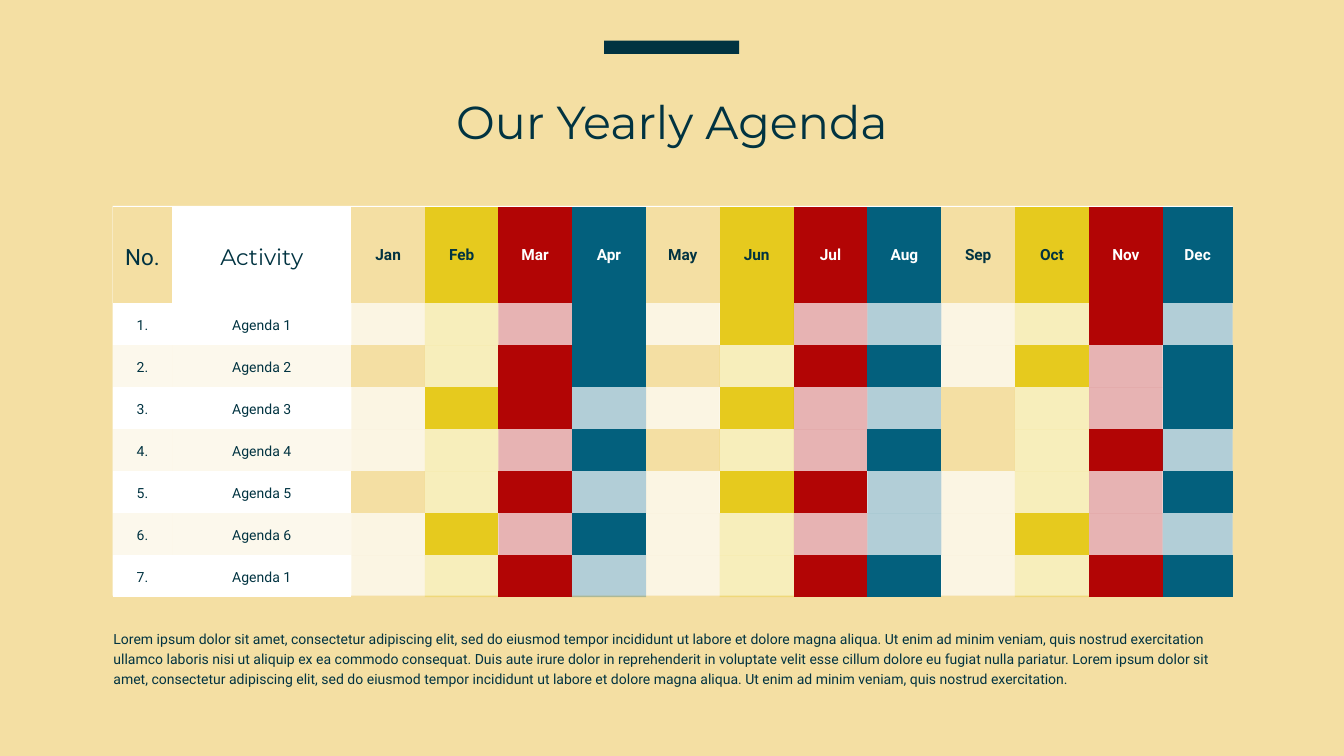
import dataclasses
import typing

import pptx
import pptx.dml.color
import pptx.enum.shapes
import pptx.enum.text
import pptx.oxml
import pptx.oxml.ns
import pptx.util

RGBColor = pptx.dml.color.RGBColor
SAND = RGBColor(0xF4, 0xDF, 0xA3)
YELLOW = RGBColor(0xE6, 0xCA, 0x1E)
RED = RGBColor(0xB2, 0x05, 0x05)
TEAL = RGBColor(0x03, 0x60, 0x7D)
NAVY = RGBColor(0x01, 0x33, 0x41)
WHITE = RGBColor(0xFF, 0xFF, 0xFF)

EMU_PER_PX = 12700
DRAWING_NS = "http://schemas.openxmlformats.org/drawingml/2006/main"
NO_GRID_STYLE = "{2D5ABB26-0587-4C30-8999-92F81FD0307C}"
CENTER = pptx.enum.text.PP_ALIGN.CENTER
LEFT = pptx.enum.text.PP_ALIGN.LEFT
MIDDLE = pptx.enum.text.MSO_ANCHOR.MIDDLE
TOP = pptx.enum.text.MSO_ANCHOR.TOP

MONTHS = "Jan Feb Mar Apr May Jun Jul Aug Sep Oct Nov Dec".split()
MONTH_FILLS = [SAND, YELLOW, RED, TEAL]
MONTH_INKS = [NAVY, NAVY, WHITE, WHITE]
COLUMN_WIDTHS = [85, 256, 105, 105, 105, 106, 105, 106, 105, 106, 105, 106, 105, 100]
ROW_HEIGHTS = [138] + [60] * 7
ACTIVE_MONTHS = {
    "Agenda 1": "Apr Jun Nov",
    "Agenda 2": "Jan Mar Apr May Jul Aug Oct Dec",
    "Agenda 3": "Feb Mar Jun Sep Dec",
    "Agenda 4": "Apr May Aug Sep Nov",
    "Agenda 5": "Jan Mar Jun Jul Dec",
    "Agenda 6": "Feb Apr Oct",
}
ACTIVITIES = [*ACTIVE_MONTHS.items(), ("Agenda 1", "Mar Jul Aug Nov Dec")]
SUMMARY = (
    "Lorem ipsum dolor sit amet, consectetur adipiscing elit, sed do eiusmod tempor "
    "incididunt ut labore et dolore magna aliqua. Ut enim ad minim veniam, quis nostrud "
    "exercitation ullamco laboris nisi ut aliquip ex ea commodo consequat. Duis aute irure "
    "dolor in reprehenderit in voluptate velit esse cillum dolore eu fugiat nulla pariatur. "
    "Lorem ipsum dolor sit amet, consectetur adipiscing elit, sed do eiusmod tempor "
    "incididunt ut labore et dolore magna aliqua. Ut enim ad minim veniam, quis nostrud "
    "exercitation."
)


@dataclasses.dataclass(frozen=True)
class Area:
    left: int
    top: int
    width: int
    height: int

    def emu(self) -> dict[str, int]:
        return {name: px(value) for name, value in dataclasses.asdict(self).items()}


@dataclasses.dataclass(frozen=True)
class TextStyle:
    size: int
    font: str = "Roboto"
    color: RGBColor = NAVY
    bold: bool = False
    spacing: float = 1.0
    align: typing.Any = CENTER


@dataclasses.dataclass(frozen=True)
class AgendaCell:
    fill: RGBColor
    opacity: int = 100
    text: str = ""
    style: TextStyle = TextStyle(20, spacing=1.2)


def px(length: int) -> pptx.util.Emu:
    return pptx.util.Emu(length * EMU_PER_PX)


def set_values(target: typing.Any, values: dict[str, typing.Any]) -> None:
    for name, value in values.items():
        setattr(target, name, value)


def margins(size: int) -> dict[str, int]:
    return {f"margin_{side}": px(size) for side in ("left", "top", "right", "bottom")}


def write(frame: typing.Any, text: str, style: TextStyle) -> None:
    para = frame.paragraphs[0]
    spacing = {"alignment": style.align, "line_spacing": style.spacing,
               "space_before": px(0), "space_after": px(0)}
    set_values(para, spacing)
    span = para.add_run()
    span.text = text
    set_values(span.font, {"name": style.font, "size": pptx.util.Pt(style.size), "bold": style.bold})
    span.font.color.rgb = style.color


def fill_placeholder(box: typing.Any, area: Area, text: str, style: TextStyle, anchor: typing.Any) -> None:
    set_values(box, area.emu())
    frame = box.text_frame
    layout = {"word_wrap": True, "auto_size": pptx.enum.text.MSO_AUTO_SIZE.NONE,
              "vertical_anchor": anchor}
    set_values(frame, {**layout, **margins(2)})
    write(frame, text, style)


def remove_bullet(para: typing.Any) -> None:
    properties = para._p.get_or_add_pPr()
    properties.set("marL", "0")
    properties.set("indent", "0")
    properties.append(pptx.oxml.parse_xml(f'<a:buNone xmlns:a="{DRAWING_NS}"/>'))


def add_block(page: typing.Any, area: Area, color: RGBColor) -> None:
    block = page.shapes.add_shape(pptx.enum.shapes.MSO_SHAPE.RECTANGLE, **area.emu())
    block.fill.solid()
    block.fill.fore_color.rgb = color
    block.line.fill.background()
    block.shadow.inherit = False


def draw_cell(cell: typing.Any, content: AgendaCell) -> None:
    set_values(cell, {"vertical_anchor": MIDDLE, **margins(4)})
    cell.fill.solid()
    cell.fill.fore_color.rgb = content.fill
    if content.opacity < 100:
        color = cell._tc.tcPr.find(f".//{{{DRAWING_NS}}}srgbClr")
        alpha = f'<a:alpha xmlns:a="{DRAWING_NS}" val="{content.opacity * 1000}"/>'
        color.append(pptx.oxml.parse_xml(alpha))
    if content.text:
        write(cell.text_frame, content.text, content.style)


def header_row() -> list[AgendaCell]:
    number = AgendaCell(SAND, text="No.", style=TextStyle(32, spacing=1.2))
    activity = AgendaCell(WHITE, text="Activity", style=TextStyle(32, "Montserrat", spacing=1.2))
    months = [
        AgendaCell(MONTH_FILLS[index % 4], text=month,
                   style=TextStyle(22, color=MONTH_INKS[index % 4], bold=True))
        for index, month in enumerate(MONTHS)
    ]
    return [number, activity, *months]


def activity_row(number: int, name: str, active: str) -> list[AgendaCell]:
    fill, opacity = (WHITE, 100) if number % 2 else (SAND, 20)
    labels = [AgendaCell(fill, opacity, text) for text in (f"{number}.", name)]
    months = [
        AgendaCell(MONTH_FILLS[index % 4], 100 if month in active.split() else 30)
        for index, month in enumerate(MONTHS)
    ]
    return labels + months


def add_agenda(page: typing.Any, area: Area) -> None:
    rows = [header_row()]
    rows += [activity_row(number, *entry) for number, entry in enumerate(ACTIVITIES, 1)]
    table = page.shapes.add_table(len(rows), len(COLUMN_WIDTHS), **area.emu()).table
    set_values(table, {"first_row": False, "horz_banding": False})
    table._tbl.tblPr.find(pptx.oxml.ns.qn("a:tableStyleId")).text = NO_GRID_STYLE
    for column, width in zip(table.columns, COLUMN_WIDTHS):
        column.width = px(width)
    for row, height, contents in zip(table.rows, ROW_HEIGHTS, rows):
        row.height = px(height)
        for cell, content in zip(row.cells, contents):
            draw_cell(cell, content)


def main() -> None:
    deck = pptx.Presentation()
    set_values(deck, {"slide_width": px(1920), "slide_height": px(1080)})
    page = deck.slides.add_slide(deck.slide_layouts[1])
    page.background.fill.solid()
    page.background.fill.fore_color.rgb = SAND

    title, summary = page.placeholders
    fill_placeholder(title, Area(624, 90, 672, 167), "Our Yearly Agenda",
                     TextStyle(66, "Montserrat"), MIDDLE)
    fill_placeholder(summary, Area(160, 894, 1600, 106), SUMMARY,
                     TextStyle(20, spacing=1.2, align=LEFT), TOP)
    remove_bullet(summary.text_frame.paragraphs[0])

    add_block(page, Area(161, 294, 1600, 557), WHITE)
    add_agenda(page, Area(161, 295, sum(COLUMN_WIDTHS), sum(ROW_HEIGHTS)))
    add_block(page, Area(863, 58, 193, 19), NAVY)
    deck.save("out.pptx")


if __name__ == "__main__":
    main()
